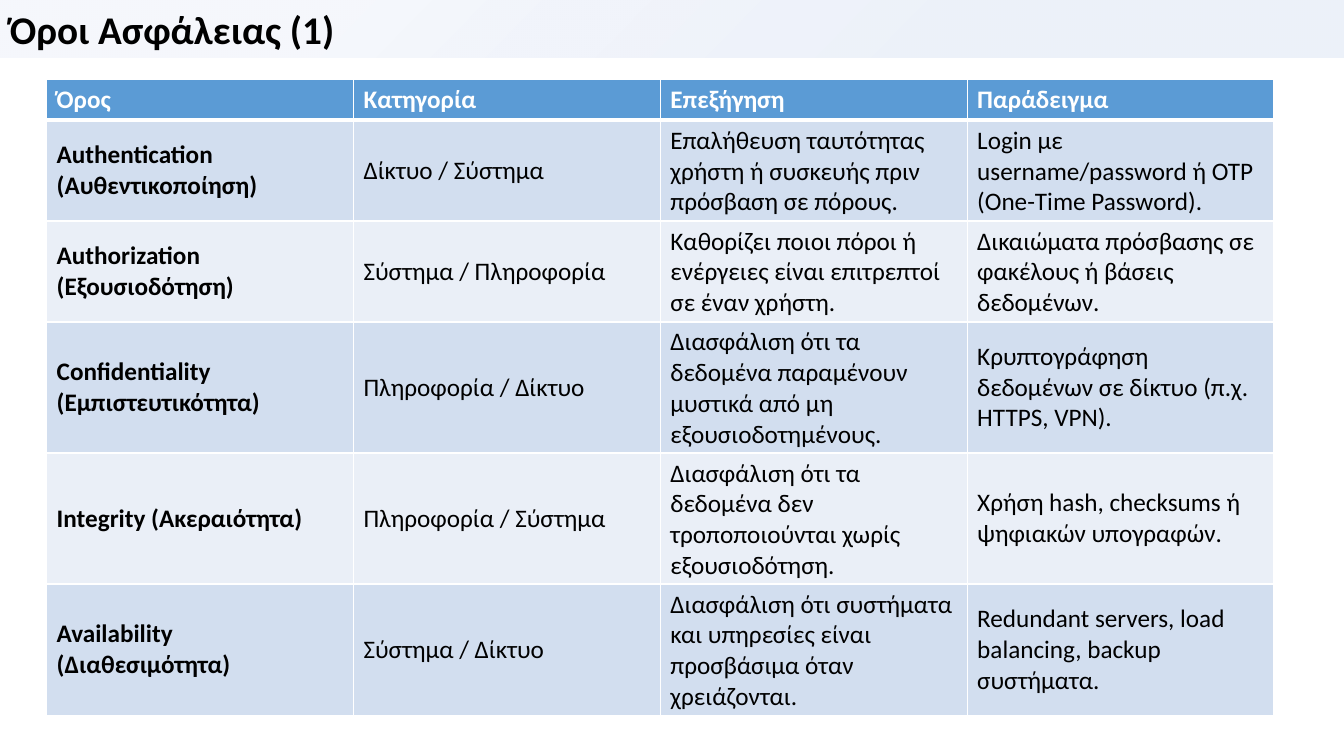
"""Build a slide with a table of security terms."""
from dataclasses import dataclass

from lxml.etree import SubElement
from pptx import Presentation
from pptx.dml.color import RGBColor as Rgb
from pptx.enum.shapes import MSO_SHAPE as Kind
from pptx.enum.text import MSO_ANCHOR as Anchor, MSO_AUTO_SIZE as Auto, PP_ALIGN as Align
from pptx.oxml import parse_xml
from pptx.oxml.ns import nsdecls, qn
from pptx.util import Pt

HUES = {
    "ink": "000000",
    "white": "FFFFFF",
    "head": "5B9BD5",
    "odd": "D2DEEF",
    "even": "EAEFF7",
    "band": "4472C4",
}
FONT = "Calibri"
WIDE, HIGH = 960, 540
LEFT, TOP, COL, ROW, TALL = 33.3, 56.7, 219.2, 29.2, 454.3


@dataclass
class Term:
    name: str
    kind: str
    sense: str
    case: str


HEAD = Term("Όρος", "Κατηγορία", "Επεξήγηση", "Παράδειγμα")
TERMS = [
    Term("Authentication (Αυθεντικοποίηση)", "Δίκτυο / Σύστημα",
         "Επαλήθευση ταυτότητας χρήστη ή συσκευής πριν πρόσβαση σε πόρους.",
         "Login με username/password ή OTP (One-Time Password)."),
    Term("Authorization (Εξουσιοδότηση)", "Σύστημα / Πληροφορία",
         "Καθορίζει ποιοι πόροι ή ενέργειες είναι επιτρεπτοί σε έναν χρήστη.",
         "Δικαιώματα πρόσβασης σε φακέλους ή βάσεις δεδομένων."),
    Term("Confidentiality (Εμπιστευτικότητα)", "Πληροφορία / Δίκτυο",
         "Διασφάλιση ότι τα δεδομένα παραμένουν μυστικά από μη εξουσιοδοτημένους.",
         "Κρυπτογράφηση δεδομένων σε δίκτυο (π.χ. HTTPS, VPN)."),
    Term("Integrity (Ακεραιότητα)", "Πληροφορία / Σύστημα",
         "Διασφάλιση ότι τα δεδομένα δεν τροποποιούνται χωρίς εξουσιοδότηση.",
         "Χρήση hash, checksums ή ψηφιακών υπογραφών."),
    Term("Availability (Διαθεσιμότητα)", "Σύστημα / Δίκτυο",
         "Διασφάλιση ότι συστήματα και υπηρεσίες είναι προσβάσιμα όταν χρειάζονται.",
         "Redundant servers, load balancing, backup συστήματα."),
]


def write(frame, text: str, size: float, hue: str, bold: bool) -> None:
    para = frame.paragraphs[0]
    para.alignment = Align.LEFT
    run = para.add_run()
    run.text = text
    font = run.font
    font.name, font.size, font.bold = FONT, Pt(size), bold
    font.color.rgb = Rgb.from_string(HUES[hue])


def shade(shape) -> None:
    shape.fill.background()
    stops = "".join(
        f'<a:gs pos="{pos}"><a:srgbClr val="{HUES["band"]}">'
        f'<a:alpha val="{alpha}"/></a:srgbClr></a:gs>'
        for pos, alpha in ((26000, 10000), (76000, 5000))
    )
    grad = parse_xml(
        f'<a:gradFill {nsdecls("a")} rotWithShape="1"><a:gsLst>{stops}</a:gsLst>'
        '<a:path path="circle"><a:fillToRect l="100000" t="100000"/></a:path></a:gradFill>'
    )
    props = shape.fill._xPr
    props.replace(props.find(qn("a:noFill")), grad)


def edge(cell, side: str, width: float) -> None:
    line = SubElement(cell._tc.get_or_add_tcPr(), qn(f"a:ln{side}"), w=str(Pt(width)))
    fill = SubElement(line, qn("a:solidFill"))
    SubElement(fill, qn("a:srgbClr"), val=HUES["white"])


def draw_title(slide, text: str) -> None:
    bar = slide.shapes.add_shape(Kind.RECTANGLE, Pt(0), Pt(0), Pt(WIDE), Pt(41.2))
    bar.shadow.inherit = False
    bar.line.fill.background()
    shade(bar)
    frame = bar.text_frame
    frame.word_wrap = True
    frame.auto_size = Auto.SHAPE_TO_FIT_TEXT
    frame.vertical_anchor = Anchor.TOP
    write(frame, text, 28, "ink", True)


def draw_cell(cell, text: str, row: int, col: int) -> None:
    cell.vertical_anchor = Anchor.MIDDLE
    thick = {"T": row == 1, "B": row == 0}
    for side in "LRTB":
        edge(cell, side, 3 if thick.get(side) else 1)
    cell.fill.solid()
    fill = "head" if row == 0 else "odd" if row % 2 else "even"
    cell.fill.fore_color.rgb = Rgb.from_string(HUES[fill])
    write(cell.text_frame, text, 18, "ink" if row else "white", row == 0 or col == 0)


def draw_table(slide, terms: list[Term]) -> None:
    frame = slide.shapes.add_table(len(terms), 4, Pt(LEFT), Pt(TOP), Pt(4 * COL), Pt(TALL))
    table = frame.table
    for col in table.columns:
        col.width = Pt(COL)
    for row, term in enumerate(terms):
        table.rows[row].height = Pt(ROW)
        for col, text in enumerate((term.name, term.kind, term.sense, term.case)):
            draw_cell(table.cell(row, col), text, row, col)
    frame.height = Pt(TALL)


def main() -> None:
    deck = Presentation()
    deck.slide_width, deck.slide_height = Pt(WIDE), Pt(HIGH)
    slide = deck.slides.add_slide(deck.slide_layouts[6])
    draw_title(slide, "Όροι Ασφάλειας (1)")
    draw_table(slide, [HEAD, *TERMS])
    deck.save("out.pptx")


if __name__ == "__main__":
    main()
